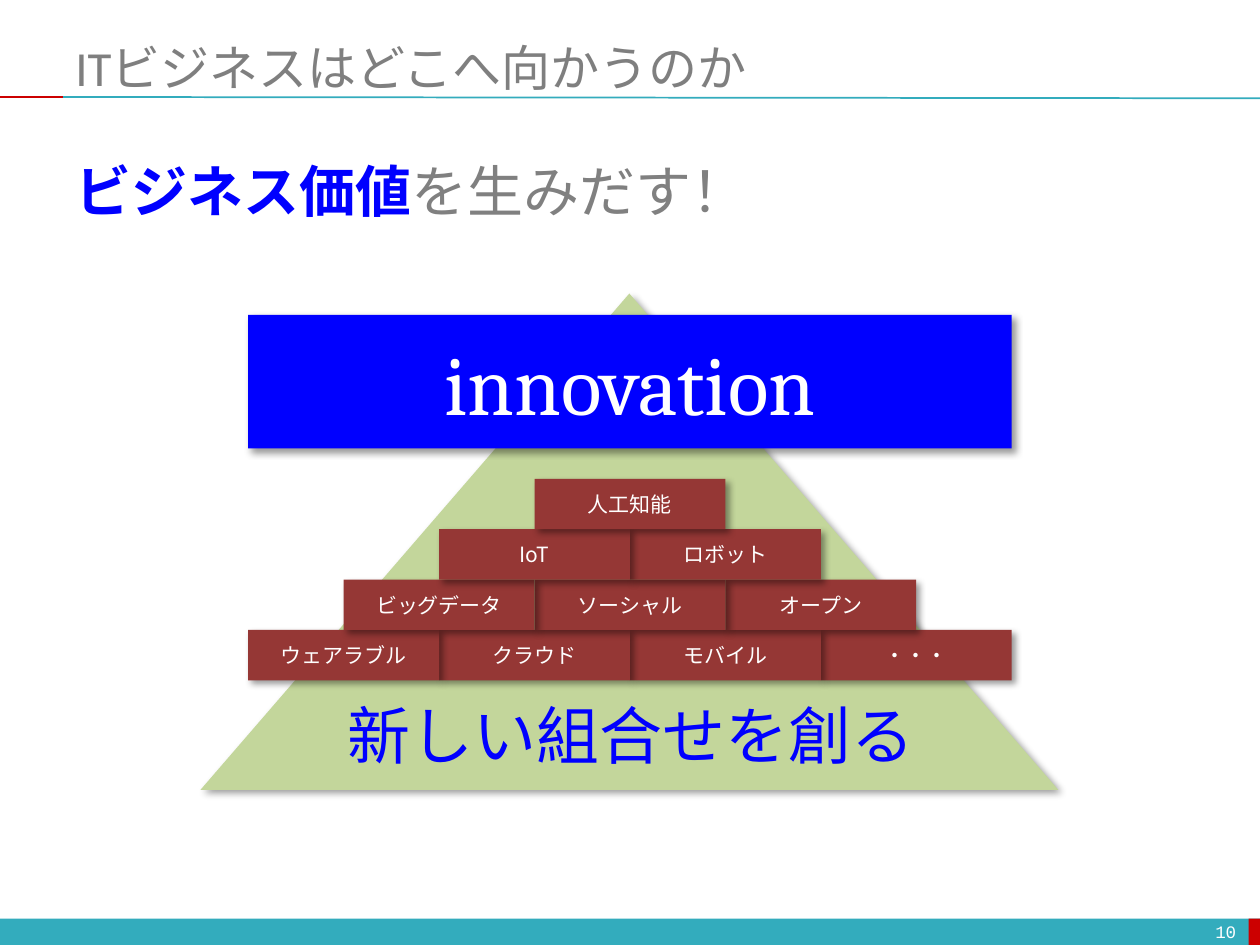
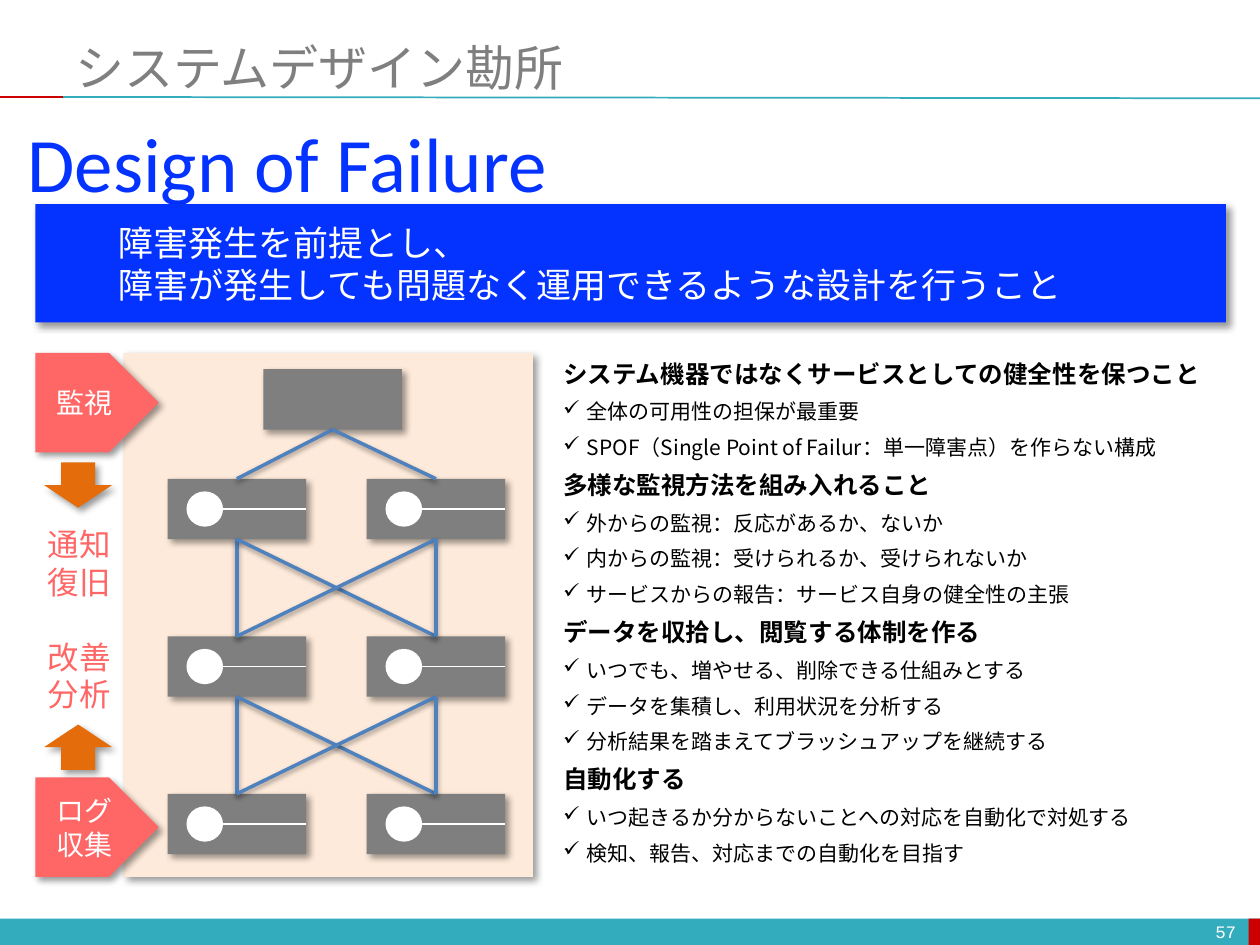
from dataclasses import dataclass
from itertools import product
from typing import NamedTuple, Optional

from lxml import etree
from pptx import Presentation
from pptx.dml.color import RGBColor
from pptx.enum.shapes import MSO_CONNECTOR as CONN, MSO_SHAPE as SHAPE
from pptx.enum.text import MSO_ANCHOR as ANCHOR, PP_ALIGN as ALIGN
from pptx.oxml.ns import qn
from pptx.util import Inches, Pt

COLORS = {
    "teal": "33ACBD", "red": "CC0000", "white": "FFFFFF", "black": "000000",
    "title": "7F7F7F", "grey": "808080", "blue": "0000FF", "azure": "0432FF",
    "green": "C3D69B", "brick": "953735", "peach": "FDEADA",
    "server": "7F7F7F", "link": "4F81BD", "coral": "FF6666", "orange": "E46C0A",
}
JP = "Noto Sans CJK JP"


class Box(NamedTuple):
    x: float
    y: float
    w: float
    h: float


class Shadow(NamedTuple):
    alpha: int
    blur: float
    dist: float
    angle: int


SHAPE_SHADOW = Shadow(40, 4, 3, 45)
LINK_SHADOW = Shadow(38, 3.1, 1.6, 90)


@dataclass
class Style:
    size: int
    color: str
    font: str = JP
    bold: bool = False


@dataclass
class Para:
    runs: list[tuple[str, Style]]
    align: ALIGN = ALIGN.LEFT
    before: float = 0
    bullet: bool = False


@dataclass
class Topic:
    heading: str
    points: list[str]


def rgb(name: str) -> RGBColor:
    return RGBColor.from_string(COLORS[name])


def set_shadow(shape, shadow: Optional[Shadow]) -> None:
    """Give the shape its own effect list, empty when there is no shadow."""
    props = shape._element.spPr
    effects = etree.SubElement(props, qn("a:effectLst"))
    if shadow:
        outer = etree.SubElement(
            effects, qn("a:outerShdw"), blurRad=str(Pt(shadow.blur)),
            dist=str(Pt(shadow.dist)), dir=str(shadow.angle * 60000),
            algn="tl", rotWithShape="0")
        color = etree.SubElement(outer, qn("a:srgbClr"), val=COLORS["black"])
        etree.SubElement(color, qn("a:alpha"), val=str(shadow.alpha * 1000))


def add_paras(tf, paras: list[Para]) -> None:
    for i, para in enumerate(paras):
        p = tf.add_paragraph() if i else tf.paragraphs[0]
        if para.bullet:
            props = p._p.get_or_add_pPr()
            props.set("marL", str(Inches(0.19)))
            props.set("indent", str(Inches(-0.19)))
            etree.SubElement(props, qn("a:buChar"), char="✓")
        p.alignment = para.align
        if i and para.before:
            p.space_before = Pt(para.before)
        for text, style in para.runs:
            r = p.add_run()
            r.text = text
            r.font.size = Pt(style.size)
            r.font.bold = style.bold
            r.font.name = style.font
            r.font.color.rgb = rgb(style.color)
            etree.SubElement(r._r.get_or_add_rPr(), qn("a:ea"), typeface=JP)


def lines(texts: list[str], style: Style, align: ALIGN = ALIGN.LEFT) -> list[Para]:
    return [Para([(text, style)], align) for text in texts]


def add_shape(slide, kind: SHAPE, box: Box, fill: str,
              shadow: Optional[Shadow] = SHAPE_SHADOW,
              paras: Optional[list[Para]] = None):
    sp = slide.shapes.add_shape(kind, *map(Inches, box))
    sp.fill.solid()
    sp.fill.fore_color.rgb = rgb(fill)
    sp.line.fill.background()
    set_shadow(sp, shadow)
    if paras:
        sp.text_frame.vertical_anchor = ANCHOR.MIDDLE
        add_paras(sp.text_frame, paras)
    return sp


def add_text(slide, box: Box, paras: list[Para], wrap: bool = False,
             anchor: ANCHOR = ANCHOR.TOP) -> None:
    tf = slide.shapes.add_textbox(*map(Inches, box)).text_frame
    tf.word_wrap = wrap
    tf.vertical_anchor = anchor
    add_paras(tf, paras)


def add_line(slide, start: tuple[float, float], end: tuple[float, float],
             color: str, width: float, shadow: Optional[Shadow] = None) -> None:
    line = slide.shapes.add_connector(CONN.STRAIGHT, *map(Inches, start + end))
    line.line.color.rgb = rgb(color)
    line.line.width = Pt(width)
    set_shadow(line, shadow)


def add_page(prs, title: str, number: int):
    """Add a slide with the shared title, rules, footer band and page number."""
    slide = prs.slides.add_slide(prs.slide_layouts[6])
    add_shape(slide, SHAPE.RECTANGLE, Box(0, 7.29, 10, 0.21), "teal", None)
    add_shape(slide, SHAPE.RECTANGLE, Box(9.91, 7.29, 0.09, 0.21), "red", None)
    add_line(slide, (0.5, 0.77), (10, 0.78), "teal", 1)
    add_line(slide, (0, 0.77), (0.5, 0.77), "red", 1)
    add_text(slide, Box(0.5, 0.3, 9.5, 0.46),
             lines([title], Style(28, "title", "Calibri")), True, ANCHOR.MIDDLE)
    add_text(slide, Box(7.58, 7.27, 2.33, 0.24),
             lines([str(number)], Style(10, "white", "Courier New"), ALIGN.RIGHT),
             True, ANCHOR.MIDDLE)
    return slide


def build_innovation(prs) -> None:
    slide = add_page(prs, "ITビジネスはどこへ向かうのか", 10)
    add_text(slide, Box(0.5, 1.19, 5.59, 0.64), [Para([
        ("ビジネス価値", Style(32, "blue", bold=True)),
        ("を生みだす！", Style(32, "grey"))])])
    add_shape(slide, SHAPE.ISOSCELES_TRIANGLE, Box(1.59, 2.33, 6.81, 3.94), "green")
    add_text(slide, Box(2.63, 5.48, 4.75, 0.71),
             lines(["新しい組合せを創る"], Style(36, "blue"), ALIGN.CENTER))

    brick_rows = [
        ["人工知能"],
        ["IoT", "ロボット"],
        ["ビッグデータ", "ソーシャル", "オープン"],
        ["ウェアラブル", "クラウド", "モバイル", "・・・"],
    ]
    brick_w, brick_h, top, center = 1.515, 0.4, 3.8, 5
    for row, names in reversed(list(enumerate(brick_rows))):
        left = center - len(names) * brick_w / 2
        for col, name in reversed(list(enumerate(names))):
            box = Box(left + col * brick_w, top + row * brick_h, brick_w, brick_h)
            add_shape(slide, SHAPE.RECTANGLE, box, "brick",
                      paras=lines([name], Style(12, "white"), ALIGN.CENTER))
    add_shape(slide, SHAPE.RECTANGLE, Box(1.97, 2.5, 4 * brick_w, 1.06), "blue",
              paras=lines(["innovation"], Style(48, "white", "Cambria"), ALIGN.CENTER))


SERVER_W, SERVER_H = 1.1, 0.48
SERVER_XS = (1.33, 2.91)
SERVER_YS = (3.8, 5.05, 6.3)


def add_server(slide, x: float, y: float) -> None:
    add_shape(slide, SHAPE.RECTANGLE, Box(x, y, SERVER_W, SERVER_H), "server")
    add_shape(slide, SHAPE.OVAL, Box(x + 0.15, y + 0.1, 0.29, 0.28), "white", None)
    middle = y + SERVER_H / 2
    add_line(slide, (x + 0.43, middle), (x + SERVER_W, middle), "white", 0.75)


def add_network(slide) -> None:
    add_shape(slide, SHAPE.RECTANGLE, Box(0.98, 2.8, 3.25, 4.16), "peach")
    for y, x in product(SERVER_YS, SERVER_XS):
        add_server(slide, x, y)
    root = Box(2.09, 2.93, SERVER_W, SERVER_H)
    add_shape(slide, SHAPE.RECTANGLE, root, "server")

    centers = [x + SERVER_W / 2 for x in SERVER_XS]
    root_bottom = (root.x + root.w / 2, root.y + root.h)
    links = [(root_bottom, (x, SERVER_YS[0])) for x in centers]
    for upper, lower in zip(SERVER_YS, SERVER_YS[1:]):
        links += [((a, upper + SERVER_H), (b, lower))
                  for a, b in product(centers, repeat=2)]
    for start, end in links:
        add_line(slide, start, end, "link", 2, LINK_SHADOW)


def add_cycle(slide) -> None:
    """Draw the monitoring and logging labels with what happens between them."""
    for y, label in ((2.8, ["監視"]), (6.17, ["ログ", "収集"])):
        add_shape(slide, SHAPE.PENTAGON, Box(0.28, y, 0.98, 0.79), "coral",
                  paras=lines(label, Style(16, "white"), ALIGN.CENTER))
    steps = lines(["通知", "復旧", "改善", "分析"], Style(18, "coral"))
    steps[2].before = 21
    add_text(slide, Box(0.28, 4.12, 0.71, 1.62), steps)
    for y, turn in ((3.67, 0), (5.75, 180)):
        arrow = add_shape(slide, SHAPE.DOWN_ARROW, Box(0.35, y, 0.54, 0.36), "orange")
        arrow.rotation = turn


def build_failure_design(prs) -> None:
    slide = add_page(prs, "システムデザイン勘所", 57)
    add_text(slide, Box(0.12, 0.87, 4.37, 0.84),
             lines(["Design of Failure"], Style(44, "azure", "Calibri")))
    banner = add_shape(
        slide, SHAPE.RECTANGLE, Box(0.28, 1.62, 9.45, 0.94), "azure",
        paras=lines(["障害発生を前提とし、",
                     "障害が発生しても問題なく運用できるような設計を行うこと"],
                    Style(20, "white")))
    banner.text_frame.margin_left = Inches(0.66)
    add_network(slide)
    add_cycle(slide)

    topics = [
        Topic("システム機器ではなくサービスとしての健全性を保つこと", [
            "全体の可用性の担保が最重要",
            "SPOF（Single Point of Failur：単一障害点）を作らない構成"]),
        Topic("多様な監視方法を組み入れること", [
            "外からの監視：反応があるか、ないか",
            "内からの監視：受けられるか、受けられないか",
            "サービスからの報告：サービス自身の健全性の主張"]),
        Topic("データを収拾し、閲覧する体制を作る", [
            "いつでも、増やせる、削除できる仕組みとする",
            "データを集積し、利用状況を分析する",
            "分析結果を踏まえてブラッシュアップを継続する"]),
        Topic("自動化する", [
            "いつ起きるか分からないことへの対応を自動化で対処する",
            "検知、報告、対応までの自動化を目指す"]),
    ]
    heading, point = Style(14, "black", bold=True), Style(12, "black")
    paras = []
    for topic in topics:
        paras.append(Para([(topic.heading, heading)], before=6))
        paras += [Para([(text, point)], before=6, bullet=True)
                  for text in topic.points]
    add_text(slide, Box(4.37, 2.8, 5.35, 4.16), paras, wrap=True)


def main() -> None:
    prs = Presentation()
    prs.slide_width, prs.slide_height = Inches(10), Inches(7.5)
    build_innovation(prs)
    build_failure_design(prs)
    prs.save("out.pptx")


if __name__ == "__main__":
    main()
